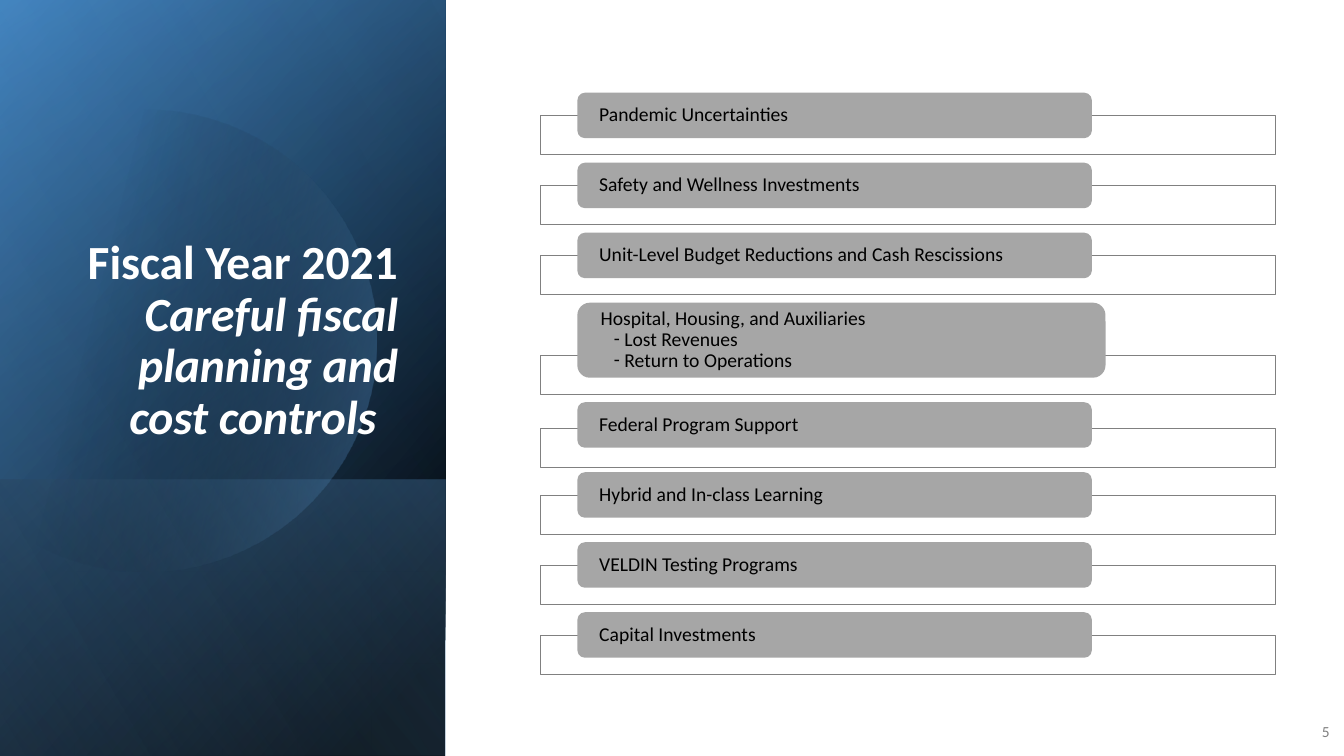
"""Build the fiscal year 2021 slide with its dark title panel and list of topics."""
import math

import lxml.etree
import pptx
import pptx.dml.color
import pptx.enum.shapes
import pptx.enum.text
import pptx.oxml.ns
import pptx.util

Pt = pptx.util.Pt
RGBColor = pptx.dml.color.RGBColor
qn = pptx.oxml.ns.qn
Shape = pptx.enum.shapes.MSO_SHAPE
Align = pptx.enum.text.PP_ALIGN
Anchor = pptx.enum.text.MSO_ANCHOR

BLACK = RGBColor(0x00, 0x00, 0x00)
WHITE = RGBColor(0xFF, 0xFF, 0xFF)
DEEP_BLUE = RGBColor(0x2E, 0x75, 0xB6)
BLUE = RGBColor(0x5B, 0x9B, 0xD5)
PALE_BLUE = RGBColor(0x9D, 0xC3, 0xE6)
GREY = RGBColor(0x80, 0x80, 0x80)
CARD_GREY = RGBColor(0xA6, 0xA6, 0xA6)

PANEL_WIDTH, PANEL_HEIGHT = 318.25, 540
CARD_HEIGHT, CARD_WIDTH, CARD_GAP = 32.5, 367.5, 17.5
FRAME_DROP = 16.3

TOPICS = [
    ("Pandemic Uncertainties", {}),
    ("Safety and Wellness Investments", {}),
    ("Unit-Level Budget Reductions and Cash Rescissions", {}),
    ("Hospital, Housing, and Auxiliaries",
     {"details": ["Lost Revenues", "Return to Operations"],
      "width": 377.3, "height": 53.6, "drop": 37.4}),
    ("Federal Program Support", {"drop": 18.7}),
    ("Hybrid and In-class Learning", {}),
    ("VELDIN Testing Programs", {}),
    ("Capital Investments", {}),
]


class SlideBuilder:
    """Hold the font and the current slide, and draw each kind of element."""

    font_name = "Calibri"

    def __init__(self, slide):
        self.slide = slide
        self.shapes = slide.shapes

    def style(self, paragraph, size, color, align=Align.LEFT, bold=False):
        """Set the font and alignment of a whole paragraph."""
        paragraph.alignment = align
        paragraph.font.name = self.font_name
        paragraph.font.size = Pt(size)
        paragraph.font.bold = bold
        paragraph.font.color.rgb = color

    def gradient(self, shape, angle, stops):
        """Fill a shape with two (position, colour, opacity) stops, angle clockwise."""
        shape.shadow.inherit = False
        shape.line.fill.background()
        shape.fill.gradient()
        shape.fill.gradient_angle = 360 - angle
        for stop, (position, color, _) in zip(shape.fill.gradient_stops, stops):
            stop.position = position / 100
            stop.color.rgb = color
        colors = shape.element.spPr.iter(qn("a:srgbClr"))
        for color, (_, _, opacity) in zip(list(colors), stops):
            alpha = lxml.etree.SubElement(color, qn("a:alpha"))
            alpha.set("val", str(opacity * 1000))

    def panel(self, top, angle, *stops):
        """Draw a gradient layer from the given top to the foot of the slide."""
        layer = self.shapes.add_shape(
            Shape.RECTANGLE, Pt(0), Pt(top), Pt(PANEL_WIDTH), Pt(PANEL_HEIGHT - top))
        self.gradient(layer, angle, stops)

    def disc(self, center_x, center_y, radius, angle, *stops):
        """Draw a circle cut off by the left edge of the slide."""
        limit = math.acos(-center_x / radius)
        steps = 120
        turns = [limit * (2 * step / steps - 1) for step in range(steps + 1)]
        points = [(Pt(center_x + radius * math.cos(turn)),
                   Pt(center_y + radius * math.sin(turn))) for turn in turns]
        outline = self.shapes.build_freeform(*points[0])
        outline.add_line_segments(points[1:], close=True)
        self.gradient(outline.convert_to_shape(), angle, stops)

    def title(self, heading, subtitle, left, top, width, height):
        """Place the title in front of the panel, its second part in italics."""
        title = self.shapes.title
        self.shapes.element.append(title.element)
        title.left, title.top = Pt(left), Pt(top)
        title.width, title.height = Pt(width), Pt(height)
        title.text_frame.vertical_anchor = Anchor.BOTTOM
        title.text_frame.word_wrap = True
        paragraph = title.text_frame.paragraphs[0]
        paragraph.line_spacing = 0.9
        self.style(paragraph, 34, WHITE, Align.RIGHT, bold=True)
        paragraph.add_run().text = heading
        paragraph.add_line_break()
        emphasis = paragraph.add_run()
        emphasis.text = subtitle
        emphasis.font.italic = True

    def page_number(self, number, left, top, width, height):
        """Write the page number."""
        box = self.shapes.add_textbox(Pt(left), Pt(top), Pt(width), Pt(height))
        box.text_frame.word_wrap = True
        box.text_frame.vertical_anchor = Anchor.MIDDLE
        box.text_frame.text = number
        self.style(box.text_frame.paragraphs[0], 11, GREY, Align.RIGHT)

    def frame(self, top):
        """Draw the thin outline behind a topic card."""
        frame = self.shapes.add_shape(
            Shape.RECTANGLE, Pt(386), Pt(top), Pt(525), Pt(28))
        frame.shadow.inherit = False
        frame.fill.solid()
        frame.fill.fore_color.rgb = WHITE
        frame.line.color.rgb = GREY
        frame.line.width = Pt(0.5)

    def card(self, top, heading, details, width, height):
        """Draw a topic card with its heading and dashed details."""
        card = self.shapes.add_shape(
            Shape.ROUNDED_RECTANGLE, Pt(412.4), Pt(top), Pt(width), Pt(height))
        card.shadow.inherit = False
        card.fill.solid()
        card.fill.fore_color.rgb = CARD_GREY
        card.line.fill.background()
        text = card.text_frame
        text.word_wrap = True
        text.vertical_anchor = Anchor.MIDDLE
        text.margin_left = text.margin_right = Pt(14)
        text.margin_top = text.margin_bottom = Pt(0)
        text.text = "\n".join([heading, *details])
        for paragraph in text.paragraphs:
            paragraph.line_spacing = 0.9
            self.style(paragraph, 14, BLACK)
        for paragraph in text.paragraphs[1:]:
            self.dash(paragraph)

    def dash(self, paragraph):
        """Give a paragraph an indented dash as its bullet."""
        properties = paragraph._p.get_or_add_pPr()
        properties.set("marL", str(Pt(17)))
        properties.set("indent", str(-Pt(7.5)))
        font = properties.find(qn("a:defRPr"))
        font.addprevious(lxml.etree.Element(qn("a:buFont"), typeface=self.font_name))
        font.addprevious(lxml.etree.Element(qn("a:buChar"), char="-"))


def main():
    """Draw the slide and save it."""
    presentation = pptx.Presentation()
    presentation.slide_width, presentation.slide_height = Pt(960), Pt(540)
    builder = SlideBuilder(
        presentation.slides.add_slide(presentation.slide_layouts[5]))

    builder.panel(0, 220, (8, BLACK, 100), (100, DEEP_BLUE, 100))
    builder.panel(0, 240, (0, BLACK, 0), (99, BLUE, 46))
    builder.panel(342.7, 140, (2, BLUE, 29), (100, BLACK, 30))
    builder.disc(104, 243.5, 165, 14, (29, BLACK, 0), (100, BLUE, 43))
    builder.panel(0, 150, (0, BLACK, 0), (99, PALE_BLUE, 11))
    builder.title("Fiscal Year 2021", "Careful fiscal planning and cost controls  ",
                  46, 132.5, 245.5, 188.6)
    builder.page_number("5", 921.6, 508.3, 35.3, 28.8)

    top = 66.2
    for heading, options in TOPICS:
        height = options.get("height", CARD_HEIGHT)
        builder.frame(top + options.get("drop", FRAME_DROP))
        builder.card(top, heading, options.get("details", []),
                     options.get("width", CARD_WIDTH), height)
        top += height + CARD_GAP

    presentation.save("out.pptx")


if __name__ == "__main__":
    main()
